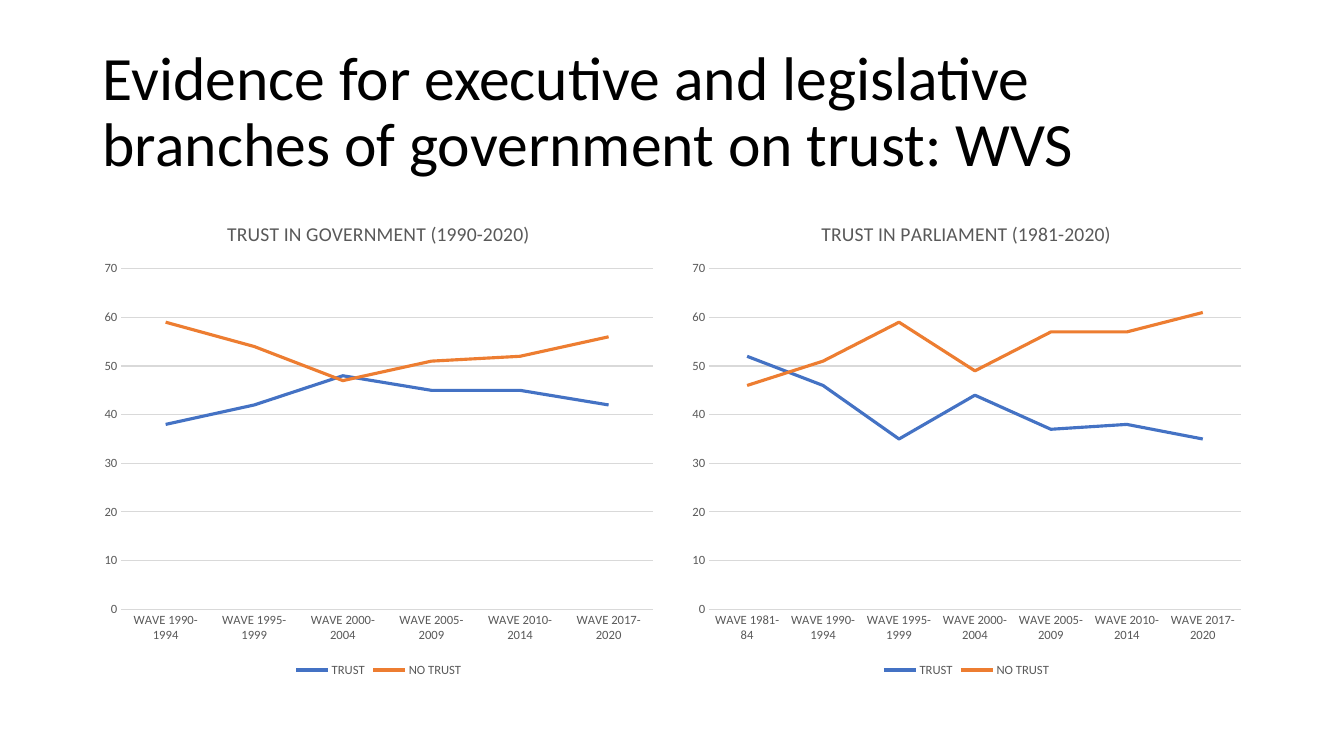
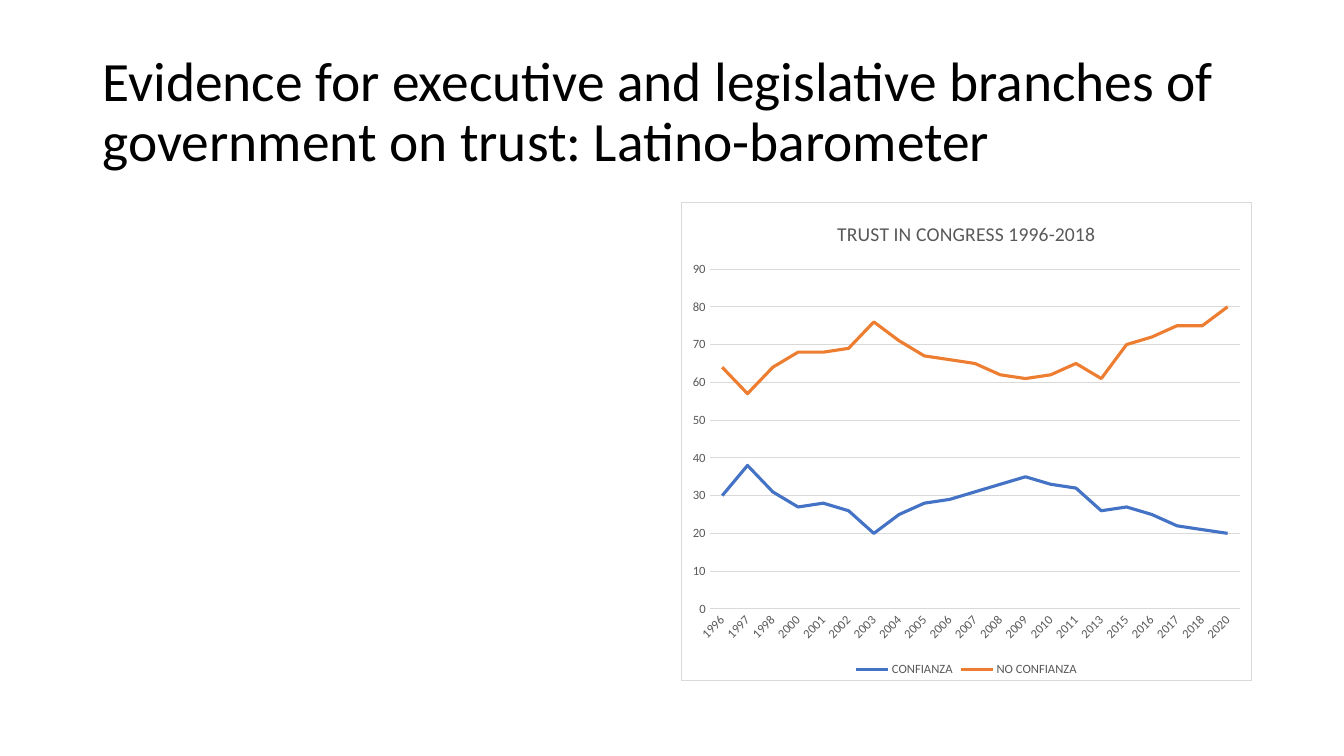
from lxml import etree
from pptx import Presentation
from pptx.chart.data import CategoryChartData
from pptx.dml.color import RGBColor
from pptx.enum import chart as ce, text as te
from pptx.oxml import parse_xml
from pptx.oxml.ns import nsdecls, qn
from pptx.util import Inches, Pt

FONT = "Calibri"
BLACK = RGBColor(0x00, 0x00, 0x00)
GRAY = RGBColor(0x59, 0x59, 0x59)
RULE = RGBColor(0xD9, 0xD9, 0xD9)
BLUE = RGBColor(0x44, 0x72, 0xC4)
ORANGE = RGBColor(0xED, 0x7D, 0x31)

LEFT, RIGHT = Inches(0.92), Inches(6.75)
PLOT_AREA = {"x": 0.05, "y": 0.14, "w": 0.93, "h": 0.71}

WAVES = ["WAVE 1990-1994", "WAVE 1995-1999", "WAVE 2000-2004",
         "WAVE 2005-2009", "WAVE 2010-2014", "WAVE 2017-2020"]
YEARS = [str(year) for year in range(1996, 2021) if year not in (1999, 2012, 2014, 2019)]

government = {
    "title": "TRUST IN GOVERNMENT (1990-2020)", "left": LEFT, "framed": False,
    "categories": WAVES,
    "series": {"TRUST": [38, 42, 48, 45, 45, 42],
               "NO TRUST": [59, 54, 47, 51, 52, 56]},
}
parliament = {
    "title": "TRUST IN PARLIAMENT (1981-2020)", "left": RIGHT, "framed": False,
    "categories": ["WAVE 1981-84"] + WAVES,
    "series": {"TRUST": [52, 46, 35, 44, 37, 38, 35],
               "NO TRUST": [46, 51, 59, 49, 57, 57, 61]},
}
congress = {
    "title": "TRUST IN CONGRESS 1996-2018", "left": RIGHT, "framed": True,
    "categories": YEARS,
    "series": {
        "CONFIANZA": [30, 38, 31, 27, 28, 26, 20, 25, 28, 29, 31,
                      33, 35, 33, 32, 26, 27, 25, 22, 21, 20],
        "NO CONFIANZA": [64, 57, 64, 68, 68, 69, 76, 71, 67, 66, 65,
                         62, 61, 62, 65, 61, 70, 72, 75, 75, 80]},
}
HEADING = "Evidence for executive and legislative branches of government on trust: "
pages = [
    (HEADING + "WVS", 44, [government, parliament]),
    (HEADING + "Latino-barometer", 39.6, [congress]),
]


def style_font(font, size, color):
    font.name, font.size, font.bold = FONT, Pt(size), False
    font.color.rgb = color


def add_trust_chart(slide, topic):
    data = CategoryChartData()
    data.categories = topic["categories"]
    for name, values in topic["series"].items():
        data.add_series(name, values)
    chart = slide.shapes.add_chart(
        ce.XL_CHART_TYPE.LINE, topic["left"], Inches(2), Inches(5.67), Inches(4.76), data).chart
    style_font(chart.font, 10, BLACK)

    heading = chart.chart_title.text_frame.paragraphs[0].add_run()
    heading.text = topic["title"]
    style_font(heading.font, 14, GRAY)
    chart.chart_title.include_in_layout = False

    chart.has_legend = True
    chart.legend.position = ce.XL_LEGEND_POSITION.BOTTOM
    chart.legend.include_in_layout = False
    style_font(chart.legend.font, 9, GRAY)

    for axis in (chart.category_axis, chart.value_axis):
        axis.major_tick_mark = axis.minor_tick_mark = ce.XL_TICK_MARK.NONE
        style_font(axis.tick_labels.font, 9, GRAY)
    chart.value_axis.format.line.fill.background()
    for rule in (chart.category_axis.format.line, chart.value_axis.major_gridlines.format.line):
        rule.color.rgb, rule.width = RULE, Pt(0.75)

    plot = chart.plots[0]
    plot.vary_by_categories = False
    for series, color in zip(plot.series, (BLUE, ORANGE)):
        series.smooth = False
        series.marker.style = ce.XL_MARKER_STYLE.NONE
        series.format.line.color.rgb, series.format.line.width = color, Pt(2.25)

    root = chart.element
    plot_area = root.find(".//" + qn("c:plotArea"))
    for old in plot_area.findall(qn("c:layout")):
        plot_area.remove(old)
    layout = parse_xml(f"<c:layout {nsdecls('c')}><c:manualLayout/></c:layout>")
    settings = {"layoutTarget": "inner", "xMode": "edge", "yMode": "edge", **PLOT_AREA}
    for tag, value in settings.items():
        etree.SubElement(layout[0], qn("c:" + tag)).set("val", str(value))
    plot_area.insert(0, layout)

    if topic["framed"]:
        root.find(qn("c:txPr")).addprevious(parse_xml(
            f'<c:spPr {nsdecls("c", "a")}>'
            '<a:solidFill><a:srgbClr val="FFFFFF"/></a:solidFill>'
            f'<a:ln w="{Pt(0.75)}"><a:solidFill><a:srgbClr val="{RULE}"/></a:solidFill></a:ln>'
            '</c:spPr>'))


prs = Presentation()
prs.slide_width, prs.slide_height = Inches(13.33), Inches(7.5)

for title, title_size, topics in pages:
    slide = prs.slides.add_slide(prs.slide_layouts[6])
    frame = slide.shapes.add_textbox(LEFT, Inches(0.4), Inches(11.5), Inches(1.45)).text_frame
    frame.word_wrap = True
    frame.vertical_anchor = te.MSO_ANCHOR.MIDDLE
    paragraph = frame.paragraphs[0]
    paragraph.line_spacing = 0.9
    run = paragraph.add_run()
    run.text = title
    style_font(run.font, title_size, BLACK)
    for topic in topics:
        add_trust_chart(slide, topic)

prs.save("out.pptx")
